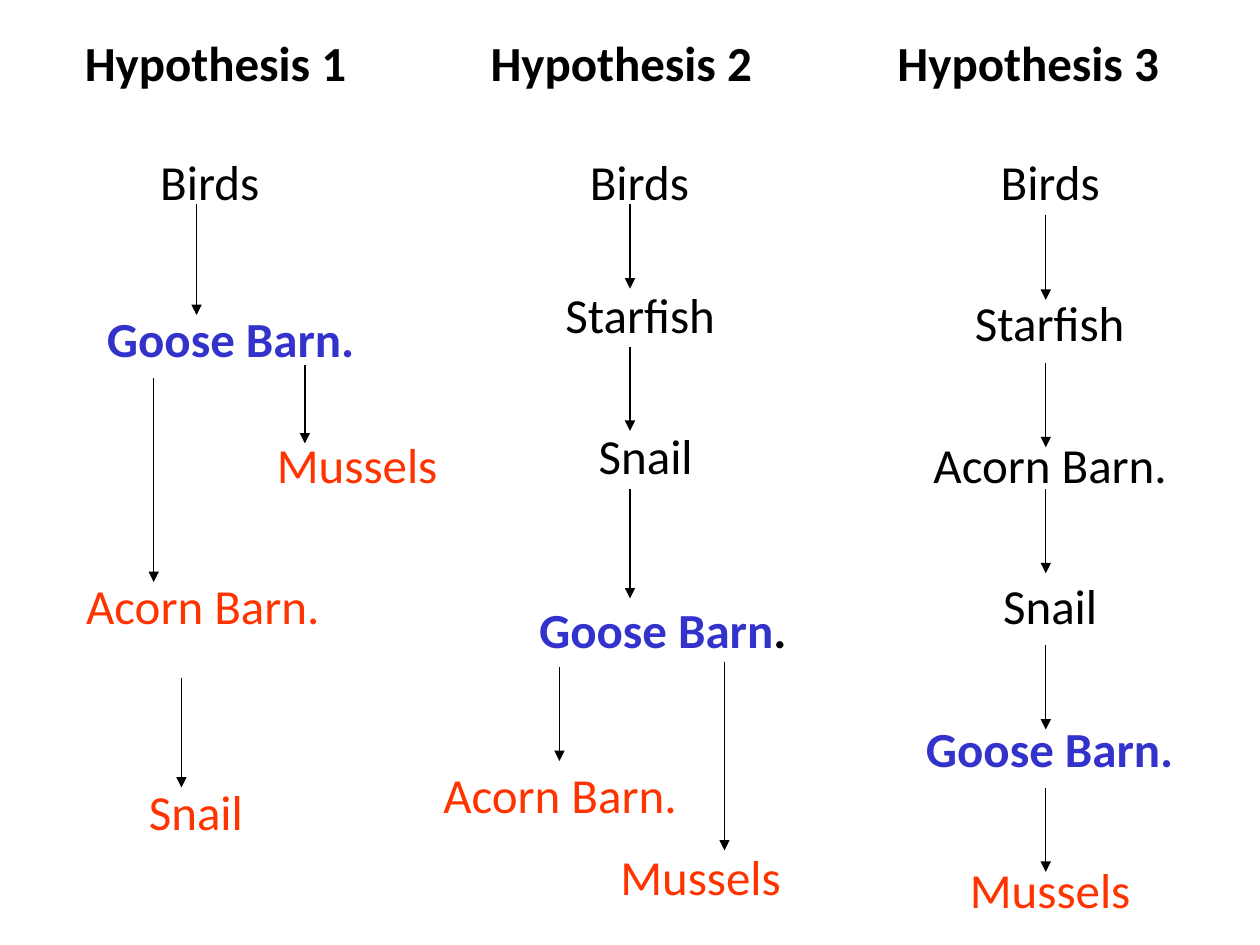
from dataclasses import dataclass

from lxml import etree
from pptx import Presentation
from pptx.dml.color import RGBColor
from pptx.enum import shapes, text
from pptx.oxml.ns import qn
from pptx.util import Inches, Pt


@dataclass(frozen=True)
class Theme:
    font: str = "Calibri"
    size: float = 28
    line_width: float = 0.75
    black: str = "000000"
    blue: str = "3333CC"
    red: str = "FF3300"


THEME = Theme()


@dataclass(frozen=True)
class Label:
    words: str
    left: float
    top: float
    width: float
    color: str = THEME.black
    bold: bool = False
    height: float = 0.61
    inset: float = 0.14
    ending: str = ""  # closing black span


@dataclass(frozen=True)
class Arrow:
    x: float
    top: float
    bottom: float


def goose(left: float, top: float, words: str = "Goose Barn.", ending: str = "") -> Label:
    return Label(words, left, top, 2.78, THEME.blue, bold=True, ending=ending)


# Column headings
HEADINGS = [
    Label(f"Hypothesis {number}", left, 0.21, 2.98, bold=True, height=0.57, inset=0.1)
    for number, left in enumerate((0.22, 3.44, 6.67), start=1)
]

# Species in each food chain, from top predator down
SPECIES = [
    # Hypothesis 1
    Label("Birds", 1, 1.13, 1.33),
    goose(0.44, 2.38),
    Label("Mussels", 1.67, 3.38, 2.33, THEME.red),
    Label("Acorn Barn.", 0.22, 4.5, 2.78, THEME.red),
    Label("Snail", 0.89, 6.13, 1.33, THEME.red),
    # Hypothesis 2
    Label("Birds", 4.41, 1.13, 1.33),
    Label("Starfish", 4.19, 2.19, 1.78),
    Label("Snail", 4.46, 3.31, 1.33),
    goose(3.87, 4.69, "Goose Barn", "."),
    Label("Acorn Barn.", 3.11, 6, 2.67, THEME.red),
    Label("Mussels", 4.67, 6.65, 1.78, THEME.red),
    # Hypothesis 3
    Label("Birds", 7.67, 1.13, 1.33),
    Label("Starfish", 7.44, 2.25, 1.78),
    Label("Acorn Barn.", 7, 3.38, 2.67),
    Label("Snail", 7.67, 4.5, 1.33),
    goose(6.94, 5.63),
    Label("Mussels", 7.17, 6.75, 2.33, THEME.red),
]

ARROWS = [
    # Hypothesis 1
    Arrow(1.56, 1.62, 2.5),
    Arrow(2.42, 2.9, 3.52),
    Arrow(1.22, 3, 4.62),
    Arrow(1.44, 5.38, 6.25),
    # Hypothesis 2
    Arrow(5, 1.62, 2.29),
    Arrow(5, 2.75, 3.42),
    Arrow(5, 3.88, 4.75),
    Arrow(4.44, 5.29, 6.04),
    Arrow(5.75, 5.25, 6.75),
    # Hypothesis 3: equal steps
    *(Arrow(8.3, top, top + 0.67) for top in (1.71, 2.88, 3.88, 5.12, 6.25)),
]


def draw_label(page, label: Label) -> None:
    box = page.shapes.add_textbox(
        Inches(label.left), Inches(label.top), Inches(label.width), Inches(label.height)
    )
    frame = box.text_frame
    frame_format = {
        "word_wrap": True,
        "auto_size": text.MSO_AUTO_SIZE.SHAPE_TO_FIT_TEXT,
        "margin_left": Inches(label.inset),
        "margin_right": Inches(label.inset),
        "margin_top": Inches(label.inset / 2),
        "margin_bottom": Inches(label.inset / 2),
    }
    for name, value in frame_format.items():
        setattr(frame, name, value)
    para = frame.paragraphs[0]
    para.alignment = text.PP_ALIGN.CENTER
    font_format = {"name": THEME.font, "size": Pt(THEME.size), "bold": label.bold}
    for words, color in ((label.words, label.color), (label.ending, THEME.black)):
        if not words:
            continue
        span = para.add_run()
        span.text = words
        for name, value in font_format.items():
            setattr(span.font, name, value)
        span.font.color.rgb = RGBColor.from_string(color)


def draw_arrow(page, arrow: Arrow) -> None:
    connector = page.shapes.add_connector(
        shapes.MSO_CONNECTOR.STRAIGHT,
        Inches(arrow.x), Inches(arrow.top), Inches(arrow.x), Inches(arrow.bottom),
    )
    connector.line.width = Pt(THEME.line_width)
    connector.line.color.rgb = RGBColor.from_string(THEME.black)
    # Arrowhead at the lower end, no shadow
    outline = connector.line._get_or_add_ln()
    etree.SubElement(outline, qn("a:tailEnd"), type="triangle")
    etree.SubElement(connector._element.spPr, qn("a:effectLst"))


def main() -> None:
    deck = Presentation()
    deck.slide_width, deck.slide_height = Inches(10), Inches(7.5)
    page = deck.slides.add_slide(deck.slide_layouts[6])
    for label in HEADINGS + SPECIES:
        draw_label(page, label)
    for arrow in ARROWS:
        draw_arrow(page, arrow)
    deck.save("out.pptx")


if __name__ == "__main__":
    main()
